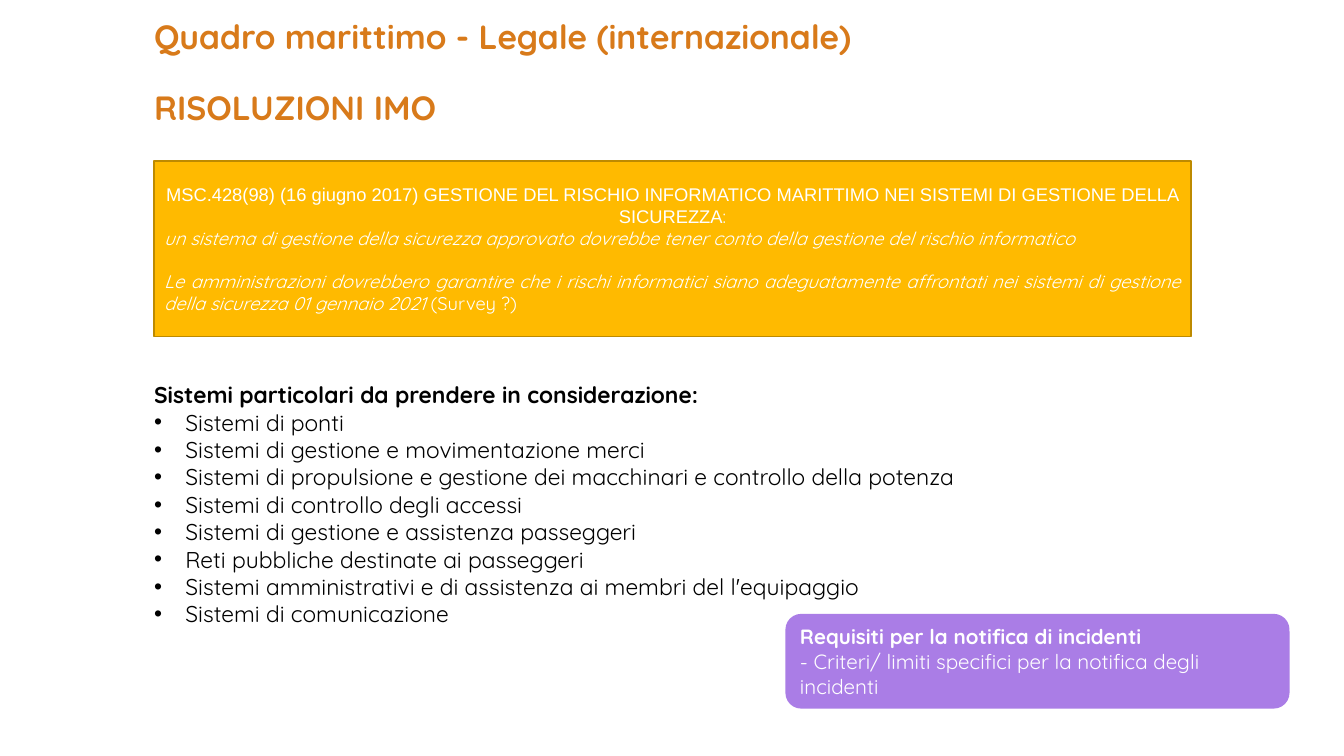
from lxml.etree import SubElement
from pptx import Presentation
from pptx.dml.color import RGBColor
from pptx.enum.shapes import MSO_SHAPE
from pptx.enum.text import MSO_ANCHOR, PP_ALIGN
from pptx.oxml.ns import qn
from pptx.util import Inches, Pt


def tint(code):
    return RGBColor.from_string(code)


class Deck:
    face = "Quicksand"
    orange = "D87A1A"
    gold = "FFBA00"
    edge = "BD8A00"
    violet = "AA7DE6"
    black = "000000"
    white = "FFFFFF"

    def __init__(self):
        self.show = Presentation()
        self.show.slide_width = Inches(13.33)
        self.show.slide_height = Inches(7.5)
        self.slide = self.show.slides.add_slide(self.show.slide_layouts[6])

    def label(self, place, lines, size, color):
        box = self.slide.shapes.add_textbox(*map(Inches, place))
        self.fill(box.text_frame, lines, size, color)
        return box.text_frame.paragraphs

    def panel(self, kind, place, color, lines, size, edge=None):
        box = self.slide.shapes.add_shape(kind, *map(Inches, place))
        box.shadow.inherit = False
        box.fill.solid()
        box.fill.fore_color.rgb = tint(color)
        if edge:
            box.line.color.rgb = tint(edge)
            box.line.width = Pt(1.25)
        else:
            box.line.fill.background()
        box.text_frame.vertical_anchor = MSO_ANCHOR.MIDDLE
        self.fill(box.text_frame, lines, size, self.white)
        return box.text_frame.paragraphs

    def fill(self, frame, lines, size, color):
        frame.word_wrap = True
        frame.text = "\n".join(lines)
        for para in frame.paragraphs:
            para.alignment = PP_ALIGN.LEFT
            for run in para.runs:
                self.style(run, size, color)

    def style(self, run, size, color):
        run.font.name = self.face
        run.font.size = Pt(size)
        run.font.color.rgb = tint(color)

    def tail(self, para, words, size, color):
        run = para.add_run()
        run.text = words
        self.style(run, size, color)

    def bold(self, para):
        for run in para.runs:
            run.font.bold = True

    def bullet(self, para):
        props = para._p.get_or_add_pPr()
        props.set("marL", str(Inches(0.31)))
        props.set("indent", str(-Inches(0.31)))
        SubElement(props, qn("a:buFont"), typeface="Arial")
        SubElement(props, qn("a:buChar"), char="•")


def main():
    deck = Deck()

    systems = deck.label((1.43, 3.73, 10.15, 2.83), [
        "Sistemi particolari da prendere in considerazione:",
        "Sistemi di ponti",
        "Sistemi di gestione e movimentazione merci",
        "Sistemi di propulsione e gestione dei macchinari e controllo della potenza",
        "Sistemi di controllo degli accessi",
        "Sistemi di gestione e assistenza passeggeri",
        "Reti pubbliche destinate ai passeggeri",
        "Sistemi amministrativi e di assistenza ai membri del l'equipaggio",
        "Sistemi di comunicazione",
    ], 16.3, deck.black)
    deck.bold(systems[0])
    for item in systems[1:]:
        deck.bullet(item)

    title = deck.label((1.43, 0.15, 10.69, 0.44), [
        "Quadro marittimo - Legale (internazionale)",
        "RISOLUZIONI IMO",
    ], 24, deck.orange)
    for line in title:
        line.line_spacing = 0.9
        deck.bold(line)
    title[1].space_before = Pt(25)

    head, rule, duty = deck.panel(
        MSO_SHAPE.RECTANGLE, (1.53, 1.6, 10.28, 1.74), deck.gold, [
            "MSC.428(98) (16 giugno 2017) GESTIONE DEL RISCHIO INFORMATICO "
            "MARITTIMO NEI SISTEMI DI GESTIONE DELLA SICUREZZA",
            "un sistema di gestione della sicurezza approvato dovrebbe tener "
            "conto della gestione del rischio informatico",
            "Le amministrazioni dovrebbero garantire che i rischi informatici "
            "siano adeguatamente affrontati nei sistemi di gestione della "
            "sicurezza 01 gennaio 2021",
        ], 13.1, deck.edge)
    head.alignment = PP_ALIGN.CENTER
    head.runs[0].font.name = "Arial"
    for line in (rule, duty):
        line.alignment = PP_ALIGN.JUSTIFY
        line.runs[0].font.italic = True
    duty.space_before = Pt(15)
    deck.tail(head, ":", 13.1, deck.white)
    deck.tail(duty, " (Survey ?)", 13.1, deck.white)

    notice = deck.panel(
        MSO_SHAPE.ROUNDED_RECTANGLE, (7.79, 6.09, 5, 0.94), deck.violet, [
            "Requisiti per la notifica di incidenti",
            "- Criteri/ limiti specifici per la notifica degli incidenti",
        ], 14.7)
    deck.bold(notice[0])

    deck.show.save("out.pptx")


if __name__ == "__main__":
    main()
